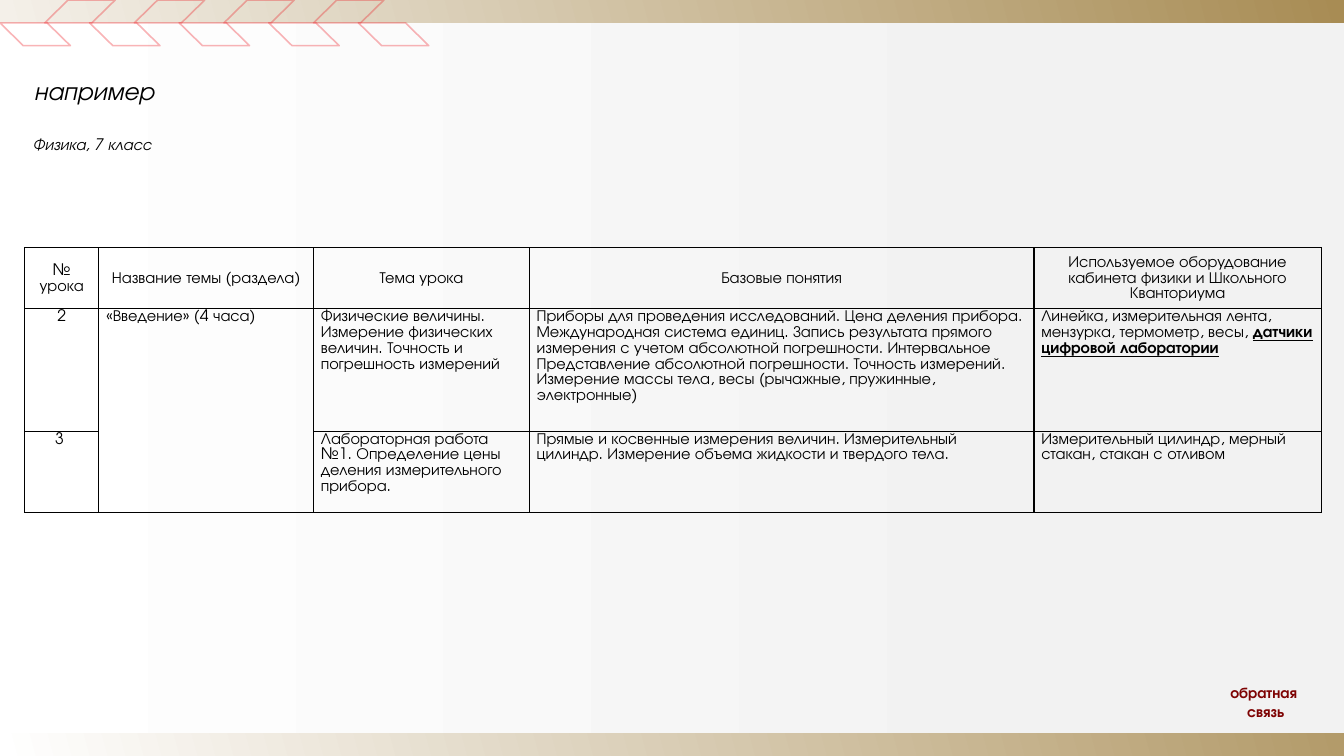
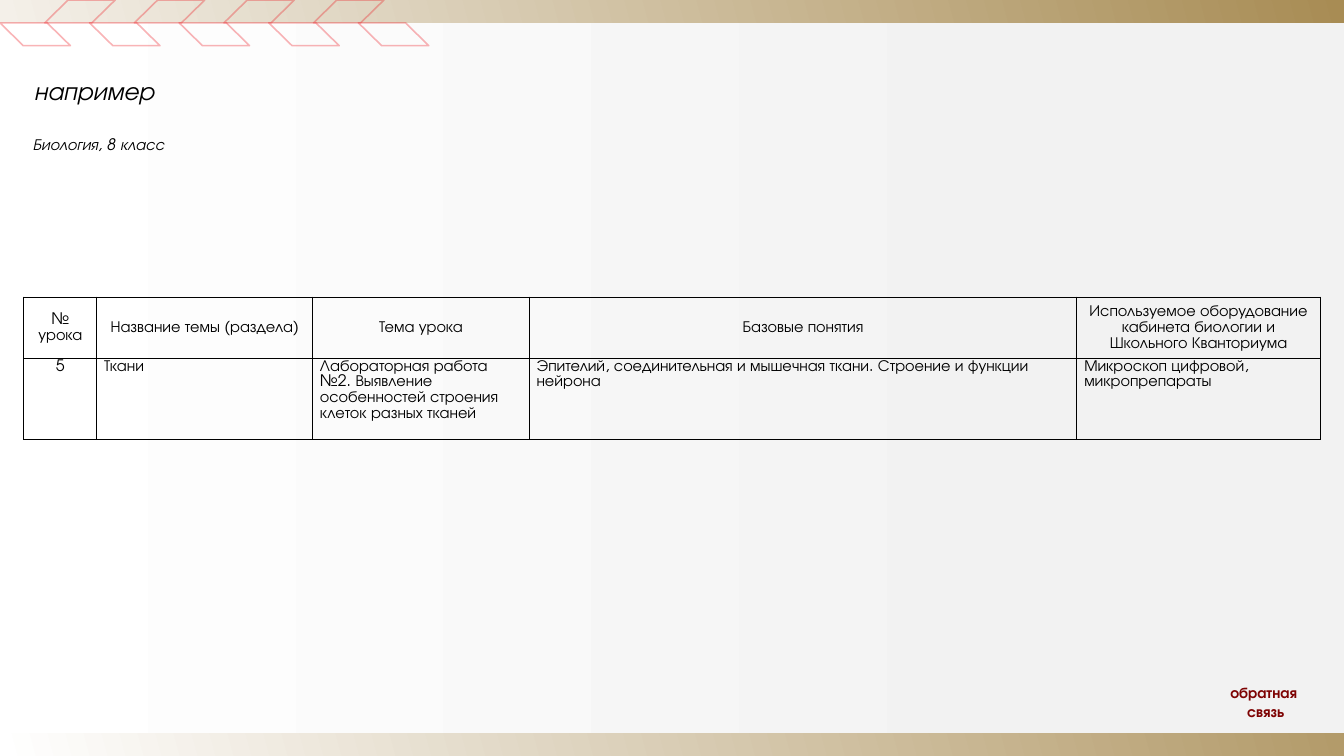
from dataclasses import dataclass

from lxml.etree import SubElement
from pptx import Presentation
from pptx.dml.color import RGBColor
from pptx.enum.shapes import MSO_SHAPE as Preset
from pptx.enum.text import MSO_ANCHOR as Anchor, MSO_AUTO_SIZE as AutoSize, PP_ALIGN as Align
from pptx.oxml.ns import qn
from pptx.util import Inches, Pt


@dataclass(frozen=True)
class Theme:
    font: str = "TeX Gyre Adventor"
    text: RGBColor = RGBColor(0x00, 0x00, 0x00)
    white: RGBColor = RGBColor(0xFF, 0xFF, 0xFF)
    gold: RGBColor = RGBColor(0xA8, 0x8C, 0x54)
    panel: RGBColor = RGBColor(0xF2, 0xF2, 0xF2)
    chevron: RGBColor = RGBColor(0xED, 0x1C, 0x24)
    feedback: RGBColor = RGBColor(0x7E, 0x03, 0x03)
    title_size: float = 20
    body_size: float = 12.5
    feedback_size: float = 12
    line_spacing: float = 1.07


THEME = Theme()
WIDTH, HEIGHT = 14.7, 8.27
TITLE_BOX = (0.27, 0.59, 3.14, 0.79)
SUBTITLE_BOX = (0.26, 1.38, 3.16, 0.39)
FEEDBACK_BOX = (13.27, 7.43, 1.15, 0.5)


def inches(box):
    return [Inches(length) for length in box]


def place(shape, box):
    shape.left, shape.top, shape.width, shape.height = inches(box)


def style(paragraph, size, color=THEME.text, bold=False, italic=False, align=Align.LEFT):
    paragraph.alignment = align
    font = paragraph.font
    font.name, font.size, font.bold, font.italic = THEME.font, Pt(size), bold, italic
    font.color.rgb = color


def add_gradient(slide, box, end_color, end_position, angle):
    shape = slide.shapes.add_shape(Preset.RECTANGLE, *inches(box))
    shape.shadow.inherit = False
    shape.line.fill.background()
    shape.fill.gradient()
    shape.fill.gradient_angle = angle
    start, end = shape.fill.gradient_stops
    start.position, start.color.rgb = 0, THEME.white
    end.position, end.color.rgb = end_position, end_color
    return shape


def add_chevrons(slide, left, top, count=9, step=0.49, width=0.77, height=0.25):
    group = slide.shapes.add_group_shape()
    for index in range(count):
        lower = index % 2 == 0
        box = (left + index * step, top + (height if lower else 0), width, height)
        shape = group.shapes.add_shape(Preset.PARALLELOGRAM, *inches(box))
        shape.adjustments[0] = 1.02
        shape.shadow.inherit = False
        shape.fill.background()
        shape.line.color.rgb = THEME.chevron
        shape.line.width = Pt(1.25)
        color = next(shape.element.spPr.iter(qn("a:srgbClr")))
        SubElement(color, qn("a:alpha"), val="32000")
        if lower:
            shape.element.spPr.find(qn("a:xfrm")).set("flipV", "1")
    return group


def add_feedback(slide, box):
    shape = slide.shapes.add_textbox(*inches(box))
    frame = shape.text_frame
    frame.word_wrap = True
    frame.text = "обратная \nсвязь"
    for paragraph in frame.paragraphs:
        style(paragraph, THEME.feedback_size, THEME.feedback, bold=True, align=Align.CENTER)
    return shape


def decorate_layout(layout, slide):
    for placeholder in list(layout.placeholders):
        if placeholder.placeholder_format.idx == 0:
            place(placeholder, TITLE_BOX)
        else:
            layout.shapes.element.remove(placeholder.element)
    decorations = [
        add_gradient(slide, (0, 0, WIDTH, HEIGHT), THEME.gold, 1, 15),
        add_gradient(slide, (0, 0.25, WIDTH, 7.77), THEME.panel, 0.77, 0),
        add_feedback(slide, FEEDBACK_BOX),
        add_chevrons(slide, 0, 0),
    ]
    for shape in decorations:
        layout.shapes.element.append(shape.element)


def add_heading(slide, title, subtitle):
    place(slide.shapes.title, TITLE_BOX)
    subtitle_shape = slide.shapes.add_textbox(*inches(SUBTITLE_BOX))
    for shape, text, size in (
        (slide.shapes.title, title, THEME.title_size),
        (subtitle_shape, subtitle, THEME.body_size),
    ):
        frame = shape.text_frame
        frame.text = text
        frame.word_wrap = True
        frame.auto_size = AutoSize.NONE
        frame.vertical_anchor = Anchor.MIDDLE
        style(frame.paragraphs[0], size, italic=True)


def set_borders(cell):
    properties = cell._tc.get_or_add_tcPr()
    for index, side in enumerate(("lnL", "lnR", "lnT", "lnB")):
        line = properties.makeelement(qn(f"a:{side}"), {"w": str(Pt(1))})
        fill = SubElement(line, qn("a:solidFill"))
        SubElement(fill, qn("a:srgbClr"), val=str(THEME.text))
        properties.insert(index, line)


def fill_cell(cell, text, header, centered):
    cell.margin_left = cell.margin_right = Inches(0.08)
    cell.margin_top = cell.margin_bottom = 0
    cell.vertical_anchor = Anchor.MIDDLE if header else Anchor.TOP
    cell.fill.background()
    set_borders(cell)
    plain, _, emphasis = text.partition("|")
    paragraph = cell.text_frame.paragraphs[0]
    paragraph.add_run().text = plain
    paragraph.line_spacing = THEME.line_spacing
    style(paragraph, THEME.body_size, align=Align.CENTER if centered else Align.LEFT)
    if emphasis:
        run = paragraph.add_run()
        run.text = emphasis
        run.font.bold = run.font.underline = True


def add_lesson_table(slide, left, top, widths, heights, subject, lessons):
    header = ["№ урока", "Название темы (раздела)", "Тема урока", "Базовые понятия",
              f"Используемое оборудование кабинета {subject} и Школьного Кванториума"]
    rows = [header, *lessons]
    box = (left, top, sum(widths), sum(heights))
    table = slide.shapes.add_table(len(rows), len(header), *inches(box)).table
    table.first_row = table.horz_banding = False
    for column, width in zip(table.columns, widths):
        column.width = Inches(width)
    for row, height in zip(table.rows, heights):
        row.height = Inches(height)
    for row_index, texts in enumerate(rows):
        for column_index, text in enumerate(texts):
            is_header = row_index == 0
            cell = table.cell(row_index, column_index)
            fill_cell(cell, text, is_header, is_header or column_index == 0)
    return table


def build_physics(slide):
    add_heading(slide, "например", "Физика, 7 класс")
    lessons = [
        ["2", "«Введение» (4 часа)",
         "Физические величины. Измерение физических величин. Точность и погрешность измерений",
         "Приборы для проведения исследований. Цена деления прибора. Международная система "
         "единиц. Запись результата прямого измерения с учетом абсолютной погрешности. "
         "Интервальное Представление абсолютной погрешности. Точность измерений. Измерение "
         "массы тела, весы (рычажные, пружинные, электронные)",
         "Линейка, измерительная лента, мензурка, термометр, весы, |датчики цифровой лаборатории"],
        ["3 ", "",
         "Лабораторная работа №1. Определение цены деления измерительного прибора.",
         "Прямые и косвенные измерения величин. Измерительный цилиндр. Измерение объема "
         "жидкости и твердого тела.",
         "Измерительный цилиндр, мерный стакан, стакан с отливом"],
    ]
    table = add_lesson_table(slide, 0.27, 2.71, (0.81, 2.35, 2.36, 5.52, 3.14),
                             (0.67, 1.34, 0.89), "физики", lessons)
    table.cell(1, 1).merge(table.cell(2, 1))


def build_biology(slide):
    add_heading(slide, "например", "Биология, 8 класс")
    lessons = [
        ["5", "Ткани",
         "Лабораторная работа №2. Выявление особенностей строения клеток разных тканей",
         "Эпителий, соединительная и мышечная ткани. Строение и функции нейрона",
         "Микроскоп цифровой, микропрепараты"],
    ]
    add_lesson_table(slide, 0.26, 3.25, (0.8, 2.36, 2.37, 5.99, 2.66),
                     (0.67, 0.89), "биологии", lessons)


def main():
    presentation = Presentation()
    presentation.slide_width, presentation.slide_height = Inches(WIDTH), Inches(HEIGHT)
    layout = presentation.slide_layouts[5]
    slides = [presentation.slides.add_slide(layout) for _ in range(2)]
    decorate_layout(layout, slides[0])
    for build, slide in zip((build_physics, build_biology), slides):
        build(slide)
    presentation.save("out.pptx")


if __name__ == "__main__":
    main()
